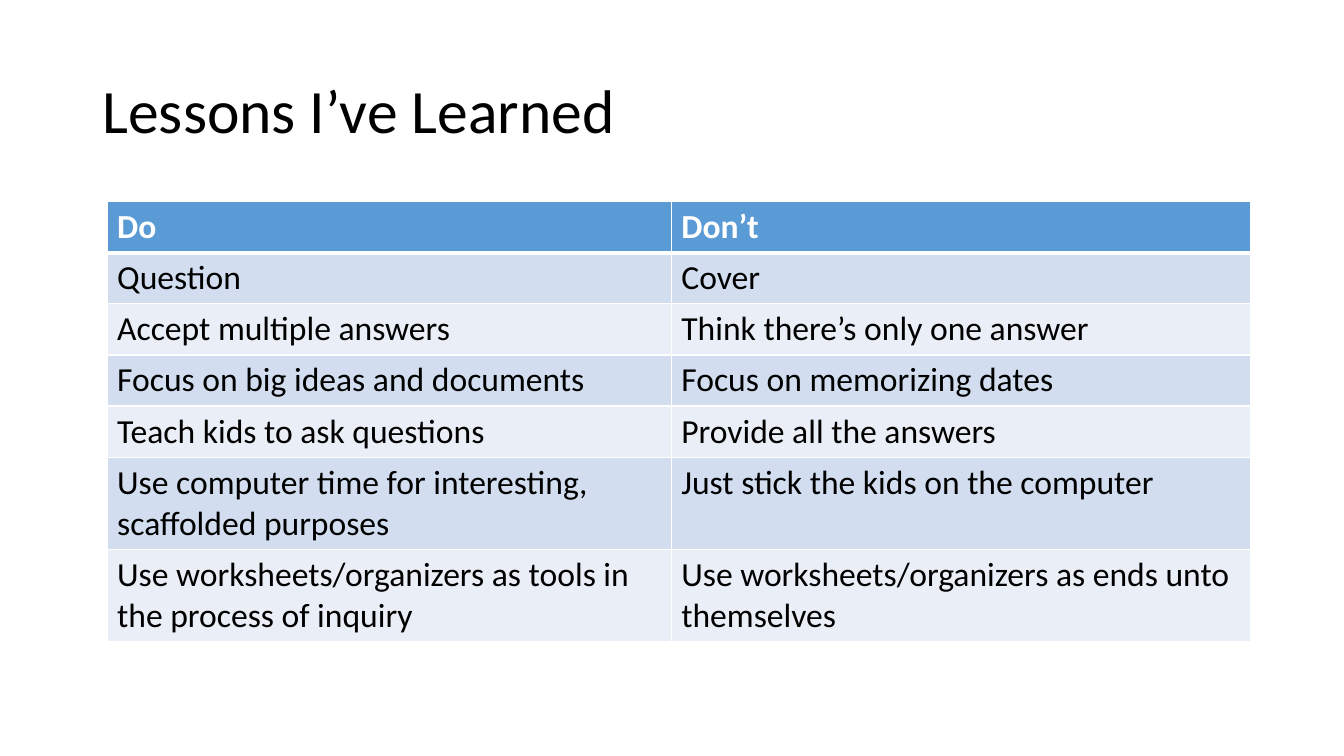
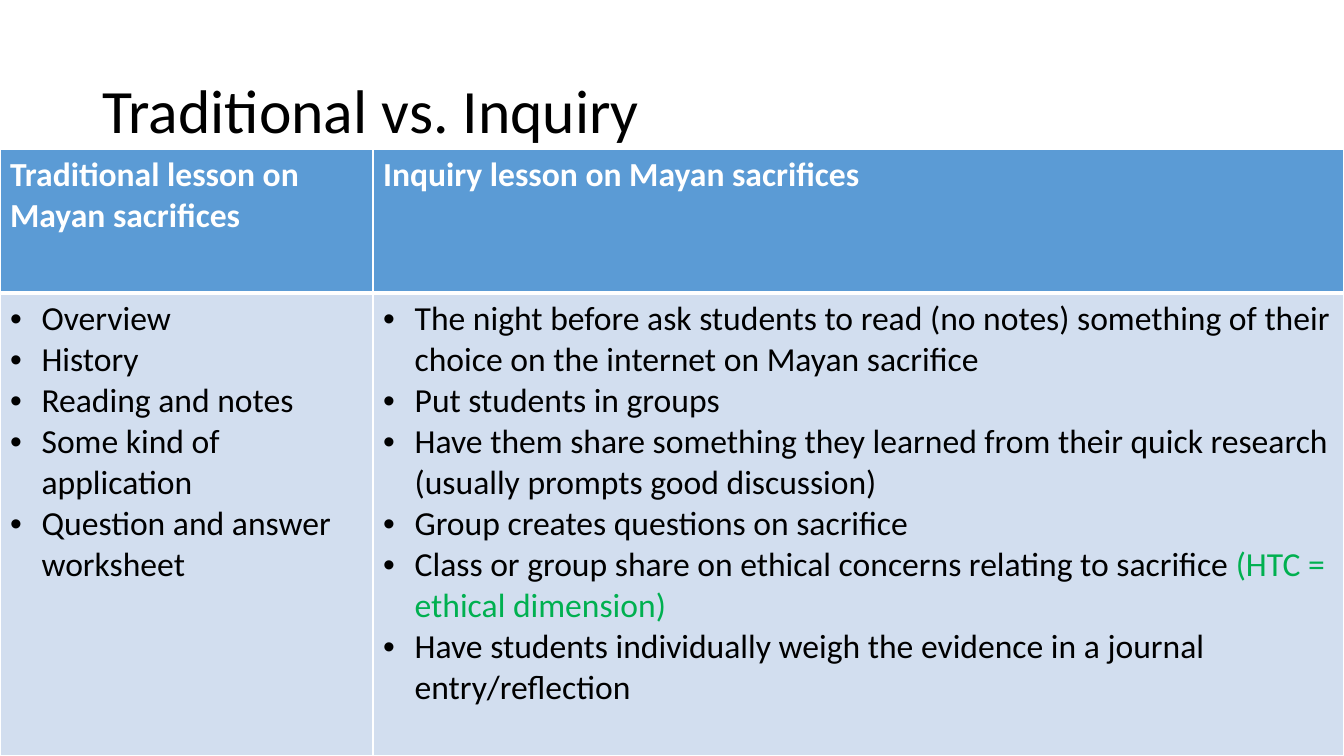
from dataclasses import dataclass

from lxml.etree import SubElement
from pptx import Presentation
from pptx.dml.color import RGBColor
from pptx.enum.dml import MSO_THEME_COLOR
from pptx.enum.text import MSO_ANCHOR, MSO_AUTO_SIZE, PP_ALIGN
from pptx.oxml import parse_xml
from pptx.oxml.ns import nsdecls, qn
from pptx.util import Pt

WHITE, BLACK, GREEN = "FFFFFF", "000000", "00B050"
HEADER_FILL, BAND_FILLS = "5B9BD5", ("D2DEEF", "EAEFF7")
TITLE_FONT = {"name": "Calibri", "size": Pt(44), "bold": False}
TABLE_FONT = {"name": "Calibri", "size": Pt(24)}
TITLE_BOX = {"left": Pt(66), "top": Pt(29), "width": Pt(828), "height": Pt(104)}
TITLE_FRAME = {
    "word_wrap": True,
    "auto_size": MSO_AUTO_SIZE.NONE,
    "vertical_anchor": MSO_ANCHOR.MIDDLE,
}
TITLE_PARAGRAPH = {"alignment": PP_ALIGN.LEFT, "line_spacing": 0.9}
BULLET_INDENT = 22.5
THIN, THICK = 1, 3


@dataclass(frozen=True)
class Entry:
    """One paragraph of a table cell, with an optional accented ending."""

    text: str
    accent: str = ""


@dataclass(frozen=True)
class Comparison:
    """A titled two-column table, measured in points."""

    title: str
    left: float
    top: float
    columns: tuple[float, ...]
    heights: tuple[float, ...]
    headers: tuple[str, ...]
    rows: tuple[tuple[tuple[Entry, ...], ...], ...]
    bulleted: bool = False


def plain_row(*texts: str) -> tuple[tuple[Entry, ...], ...]:
    """Return a row whose cells hold one paragraph each."""
    return tuple((Entry(text),) for text in texts)


COMPARISONS = (
    Comparison(
        title="Lessons I’ve Learned",
        left=76.5,
        top=144,
        columns=(403, 414),
        heights=(36,) * 5 + (65,) * 2,
        headers=("Do", "Don’t"),
        rows=(
            plain_row("Question", "Cover"),
            plain_row("Accept multiple answers", "Think there’s only one answer"),
            plain_row("Focus on big ideas and documents", "Focus on memorizing dates"),
            plain_row("Teach kids to ask questions", "Provide all the answers"),
            plain_row(
                "Use computer time for interesting, scaffolded purposes",
                "Just stick the kids on the computer",
            ),
            plain_row(
                "Use worksheets/organizers as tools in the process of inquiry",
                "Use worksheets/organizers as ends unto themselves",
            ),
        ),
    ),
    Comparison(
        title="Traditional vs. Inquiry",
        left=0,
        top=107,
        columns=(266.5, 693.5),
        heights=(102.5, 330.5),
        headers=(
            "Traditional lesson on Mayan sacrifices",
            "Inquiry lesson on Mayan sacrifices",
        ),
        rows=(
            (
                (
                    Entry("Overview"),
                    Entry("History"),
                    Entry("Reading and notes"),
                    Entry("Some kind of application"),
                    Entry("Question and answer worksheet"),
                ),
                (
                    Entry(
                        "The night before ask students to read (no notes) "
                        "something of their choice on the internet on Mayan sacrifice"
                    ),
                    Entry("Put students in groups"),
                    Entry(
                        "Have them share something they learned from their "
                        "quick research (usually prompts good discussion)"
                    ),
                    Entry("Group creates questions on sacrifice"),
                    Entry(
                        "Class or group share on ethical concerns relating to sacrifice ",
                        "(HTC = ethical dimension)",
                    ),
                    Entry(
                        "Have students individually weigh the evidence "
                        "in a journal entry/reflection"
                    ),
                ),
            ),
        ),
        bulleted=True,
    ),
)


def apply_format(target: object, values: dict) -> None:
    """Set each named attribute on the target."""
    for name, value in values.items():
        setattr(target, name, value)


def set_colour(colour_format, colour: str) -> None:
    """Give a colour format a hex colour, using the theme for black and white."""
    theme = {WHITE: MSO_THEME_COLOR.BACKGROUND_1, BLACK: MSO_THEME_COLOR.TEXT_1}
    if colour in theme:
        colour_format.theme_color = theme[colour]
    else:
        colour_format.rgb = RGBColor.from_string(colour)


def add_run(paragraph, text: str, colour: str, font: dict) -> None:
    """Append a formatted run to a paragraph."""
    run = paragraph.add_run()
    run.text = text
    apply_format(run.font, font)
    set_colour(run.font.color, colour)


def add_title(slide, text: str) -> None:
    """Place and fill the title placeholder."""
    title = slide.shapes.title
    apply_format(title, TITLE_BOX)
    apply_format(title.text_frame, TITLE_FRAME)
    paragraph = title.text_frame.paragraphs[0]
    apply_format(paragraph, TITLE_PARAGRAPH)
    add_run(paragraph, text, BLACK, TITLE_FONT)


def add_bullet(paragraph) -> None:
    """Give a paragraph a hanging round bullet."""
    properties = paragraph._p.get_or_add_pPr()
    properties.set("marL", str(Pt(BULLET_INDENT)))
    properties.set("indent", str(-Pt(BULLET_INDENT)))
    SubElement(properties, qn("a:buFont"), typeface="Arial")
    SubElement(properties, qn("a:buChar"), char="•")


def set_borders(cell, top: float, bottom: float) -> None:
    """Draw white borders around a cell."""
    widths = {"lnL": THIN, "lnR": THIN, "lnT": top, "lnB": bottom}
    properties = cell._tc.get_or_add_tcPr()
    for position, (side, width) in enumerate(widths.items()):
        border = parse_xml(
            f'<a:{side} {nsdecls("a")} w="{Pt(width)}"><a:solidFill>'
            f'<a:srgbClr val="{WHITE}"/></a:solidFill></a:{side}>'
        )
        properties.insert(position, border)


def fill_cell(cell, entries: tuple[Entry, ...], row: int, bulleted: bool) -> None:
    """Write the entries of one cell and style it by its row."""
    is_header = row == 0
    cell.fill.solid()
    set_colour(cell.fill.fore_color, HEADER_FILL if is_header else BAND_FILLS[(row - 1) % 2])
    set_borders(cell, THICK if row == 1 else THIN, THICK if is_header else THIN)
    font = TABLE_FONT | {"bold": is_header}
    for index, entry in enumerate(entries):
        frame = cell.text_frame
        paragraph = frame.add_paragraph() if index else frame.paragraphs[0]
        if bulleted and not is_header:
            add_bullet(paragraph)
        add_run(paragraph, entry.text, WHITE if is_header else BLACK, font)
        if entry.accent:
            add_run(paragraph, entry.accent, GREEN, font)


def add_comparison_table(slide, comparison: Comparison) -> None:
    """Add the table of a comparison."""
    rows = (plain_row(*comparison.headers), *comparison.rows)
    table = slide.shapes.add_table(
        len(rows),
        len(comparison.columns),
        Pt(comparison.left),
        Pt(comparison.top),
        Pt(sum(comparison.columns)),
        Pt(sum(comparison.heights)),
    ).table
    for column, width in zip(table.columns, comparison.columns):
        column.width = Pt(width)
    for row, height in zip(table.rows, comparison.heights):
        row.height = Pt(height)
    for row_index, row_cells in enumerate(rows):
        for column_index, entries in enumerate(row_cells):
            cell = table.cell(row_index, column_index)
            fill_cell(cell, entries, row_index, comparison.bulleted)


def main() -> None:
    """Build and save the presentation."""
    presentation = Presentation()
    apply_format(presentation, {"slide_width": Pt(960), "slide_height": Pt(540)})
    title_only = presentation.slide_layouts.get_by_name("Title Only")
    for comparison in COMPARISONS:
        slide = presentation.slides.add_slide(title_only)
        add_title(slide, comparison.title)
        add_comparison_table(slide, comparison)
    presentation.save("out.pptx")


if __name__ == "__main__":
    main()
